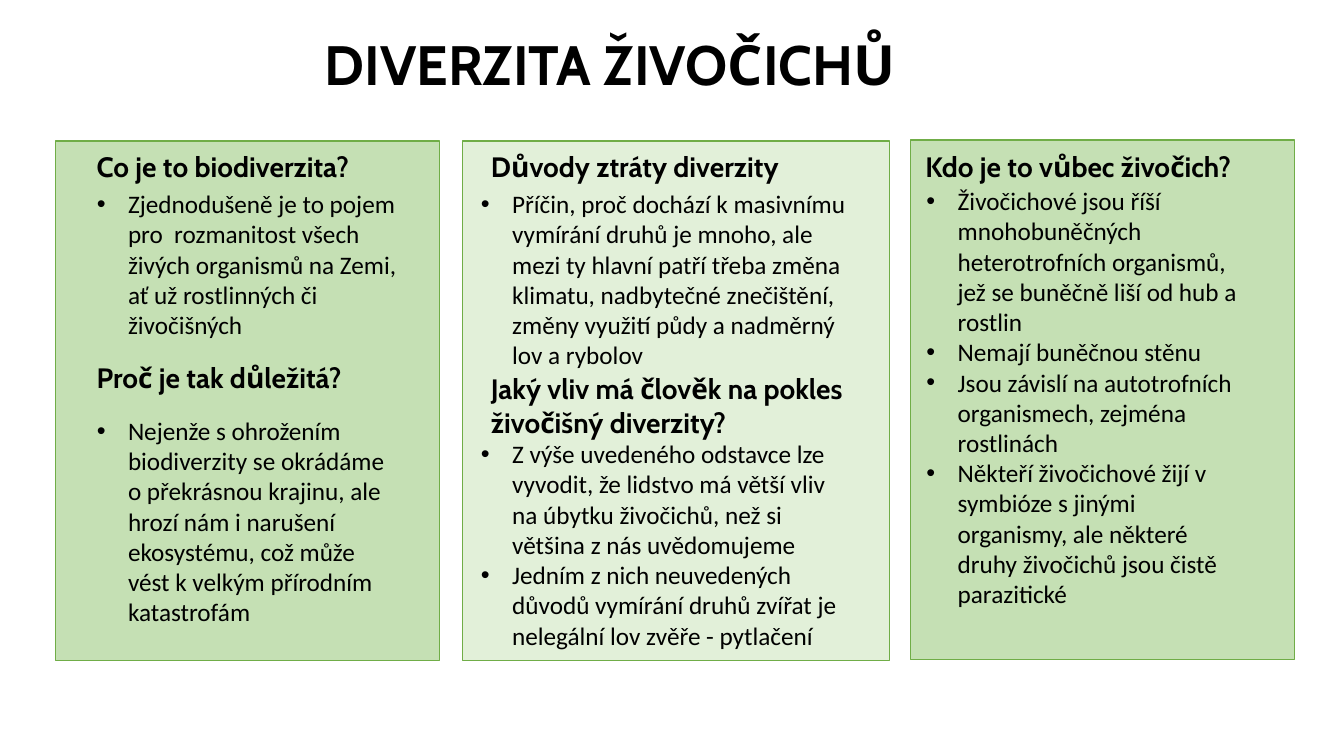
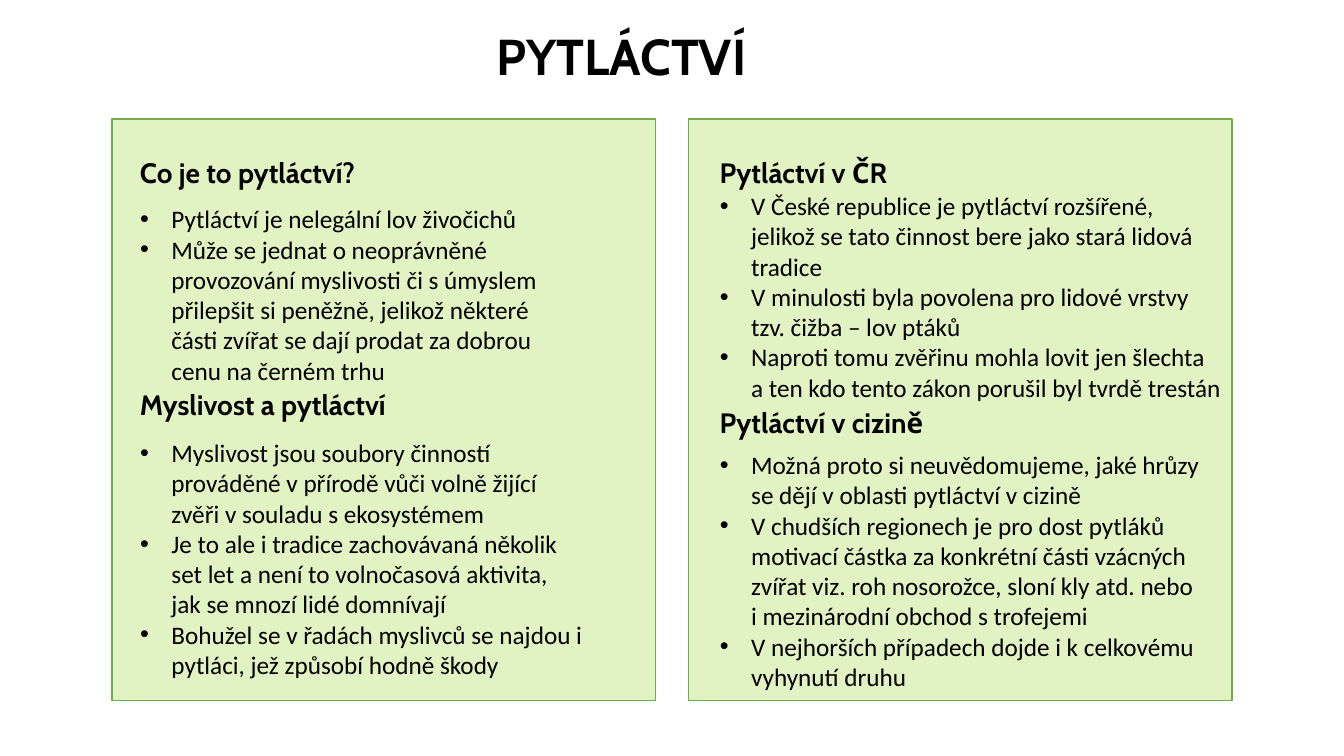
from lxml import etree
from pptx import Presentation
from pptx.dml.color import RGBColor
from pptx.enum.shapes import MSO_SHAPE as Shape
from pptx.enum.text import MSO_ANCHOR as Anchor, MSO_AUTO_SIZE as AutoSize, PP_ALIGN as Align
from pptx.oxml.ns import qn
from pptx.util import Inches, Pt

COLORS = {
    "ink": "000000",
    "border": "70AD47",
    "sage": "C5E0B4",
    "mist": "E2F0D9",
    "lime": "E1F3C3",
}
HEADING_FONT, LIST_FONT = "Cabin", "Calibri"
HEADING_HEIGHT = 0.44
BULLET_INDENT = 0.31
COMPARISON_LAYOUT = 4

DIVERSITY = {
    "title": ("DIVERZITA ŽIVOČICHŮ", (3.12, 0.06, 7.09, 1.23), 39.6),
    "panels": [
        ((0.55, 1.4, 3.81, 5.15), "sage"),
        ((4.59, 1.4, 4.23, 5.15), "mist"),
        ((9.03, 1.39, 3.81, 5.15), "sage"),
    ],
    "headings": [
        ("Co je to biodiverzita?", (0.86, 1.43, 3.19)),
        ("Proč je tak důležitá?", (0.86, 3.53, 3.08)),
        ("Důvody ztráty diverzity", (4.77, 1.43, 3.48)),
        ("Jaký vliv má člověk na pokles živočišný diverzity?", (4.77, 3.64, 3.95)),
        ("Kdo je to vůbec živočich?", (9.08, 1.43, 3.75)),
    ],
    "lists": [
        ((0.86, 1.82, 3.19, 1.62), [
            "Zjednodušeně je to pojem pro  rozmanitost všech živých organismů na Zemi, "
            "ať už rostlinných či živočišných",
        ]),
        ((0.86, 4.07, 3.19, 2.22), [
            "Nejenže s ohrožením biodiverzity se okrádáme o překrásnou krajinu, ale hrozí "
            "nám i narušení ekosystému, což může vést k velkým přírodním katastrofám",
        ]),
        ((4.67, 1.82, 3.86, 1.92), [
            "Příčin, proč dochází k masivnímu vymírání druhů je mnoho, ale mezi ty hlavní "
            "patří třeba změna klimatu, nadbytečné znečištění, změny využití půdy a "
            "nadměrný lov a rybolov",
        ]),
        ((4.67, 4.3, 3.86, 2.52), [
            "Z výše uvedeného odstavce lze vyvodit, že lidstvo má větší vliv na úbytku "
            "živočichů, než si většina z nás uvědomujeme",
            "Jedním z nich neuvedených důvodů vymírání druhů zvířat je nelegální lov "
            "zvěře - pytlačení",
        ]),
        ((9.09, 1.79, 3.38, 4.34), [
            "Živočichové jsou říší mnohobuněčných heterotrofních organismů, jež se "
            "buněčně liší od hub a rostlin",
            "Nemají buněčnou stěnu",
            "Jsou závislí na autotrofních organismech, zejména rostlinách",
            "Někteří živočichové žijí v symbióze s jinými organismy, ale některé druhy "
            "živočichů jsou čistě parazitické",
        ]),
    ],
}

POACHING = {
    "title": ("PYTLÁCTVÍ", (4.82, 0, 3.2, 1.18), 36),
    "panels": [
        ((1.11, 1.18, 5.39, 5.77), "lime"),
        ((6.83, 1.18, 5.39, 5.77), "lime"),
    ],
    "headings": [
        ("Co je to pytláctví?", (1.29, 1.49, 2.74)),
        ("Myslivost a pytláctví", (1.29, 3.8, 3.07)),
        ("Pytláctví v ČR", (7.04, 1.49, 2.14)),
        ("Pytláctví v cizině", (7.04, 3.97, 2.56)),
    ],
    "lists": [
        ((1.29, 1.97, 4.3, 1.92), [
            "Pytláctví je nelegální lov živočichů",
            "Může se jednat o neoprávněné provozování myslivosti či s úmyslem přilepšit si "
            "peněžně, jelikož některé části zvířat se dají prodat za dobrou cenu na černém "
            "trhu",
        ]),
        ((1.29, 4.29, 4.59, 2.83), [
            "Myslivost jsou soubory činností prováděné v přírodě vůči volně žijící zvěři v "
            "souladu s ekosystémem",
            "Je to ale i tradice zachovávaná několik set let a není to volnočasová "
            "aktivita, jak se mnozí lidé domnívají",
            "Bohužel se v řadách myslivců se najdou i pytláci, jež způsobí hodně škody",
        ]),
        ((7.04, 1.84, 5.18, 2.22), [
            "V České republice je pytláctví rozšířené, jelikož se tato činnost bere jako "
            "stará lidová tradice",
            "V minulosti byla povolena pro lidové vrstvy tzv. čižba – lov ptáků",
            "Naproti tomu zvěřinu mohla lovit jen šlechta a ten kdo tento zákon porušil "
            "byl tvrdě trestán",
        ]),
        ((7.04, 4.41, 4.98, 2.52), [
            "Možná proto si neuvědomujeme, jaké hrůzy se dějí v oblasti pytláctví v cizině",
            "V chudších regionech je pro dost pytláků motivací částka za konkrétní části "
            "vzácných zvířat viz. roh nosorožce, sloní kly atd. nebo i mezinárodní obchod "
            "s trofejemi",
            "V nejhorších případech dojde i k celkovému vyhynutí druhu",
        ]),
    ],
}


def color(key):
    """Return the named palette colour."""
    return RGBColor.from_string(COLORS[key])


def place(item, box):
    """Move and size an item to a box given in inches."""
    item.left, item.top, item.width, item.height = map(Inches, box)


def add_bullet(paragraph):
    """Give a paragraph a hanging round bullet."""
    properties = paragraph._p.get_or_add_pPr()
    properties.set("marL", str(Inches(BULLET_INDENT)))
    properties.set("indent", str(-Inches(BULLET_INDENT)))
    etree.SubElement(properties, qn("a:buFont")).set("typeface", "Arial")
    etree.SubElement(properties, qn("a:buChar")).set("char", "•")


def write(holder, lines, *, font, size, bold=False, bullets=False, spacing=1.0,
          anchor=Anchor.TOP, fit=AutoSize.SHAPE_TO_FIT_TEXT):
    """Fill a holder with formatted paragraphs."""
    frame = holder.text_frame
    frame.word_wrap, frame.auto_size, frame.vertical_anchor = True, fit, anchor
    for index, line in enumerate(lines):
        paragraph = frame.add_paragraph() if index else frame.paragraphs[0]
        paragraph.alignment = Align.LEFT
        paragraph.line_spacing = spacing
        paragraph.space_before = paragraph.space_after = Pt(0)
        if bullets:
            add_bullet(paragraph)
        run = paragraph.add_run()
        run.text = line
        run.font.name, run.font.size, run.font.bold = font, Pt(size), bold
        run.font.color.rgb = color("ink")


def add_panel(slide, box, fill):
    """Draw a bordered panel behind everything else on the slide."""
    panel = slide.shapes.add_shape(Shape.RECTANGLE, *map(Inches, box))
    panel.shadow.inherit = False
    panel.fill.solid()
    panel.fill.fore_color.rgb = color(fill)
    panel.line.color.rgb = color("border")
    panel.line.width = Pt(1)
    slide.shapes.title.element.addprevious(panel.element)


def add_title(slide, text, box, size):
    """Set the slide title."""
    place(slide.shapes.title, box)
    write(slide.shapes.title, [text], font=HEADING_FONT, size=size, bold=True,
          spacing=0.9, anchor=Anchor.MIDDLE, fit=AutoSize.NONE)


def add_heading(slide, text, box):
    """Add a section heading."""
    heading = slide.shapes.add_textbox(*map(Inches, (*box, HEADING_HEIGHT)))
    write(heading, [text], font=HEADING_FONT, size=20, bold=True)


def add_lists(slide, lists):
    """Put lists in the body placeholders, and in text boxes once those run out."""
    bodies = [body for body in slide.placeholders if body.placeholder_format.idx]
    for index, (box, lines) in enumerate(lists):
        if index < len(bodies):
            holder = bodies[index]
            place(holder, box)
        else:
            holder = slide.shapes.add_textbox(*map(Inches, box))
        write(holder, lines, font=LIST_FONT, size=18, bullets=True)
    for spare in bodies[len(lists):]:
        spare.element.getparent().remove(spare.element)


def add_topic(deck, topic):
    """Build one slide from its topic content."""
    slide = deck.slides.add_slide(deck.slide_layouts[COMPARISON_LAYOUT])
    for box, fill in topic["panels"]:
        add_panel(slide, box, fill)
    add_title(slide, *topic["title"])
    add_lists(slide, topic["lists"])
    for text, box in topic["headings"]:
        add_heading(slide, text, box)


def main():
    """Build and save the presentation."""
    deck = Presentation()
    deck.slide_width, deck.slide_height = Inches(13.33), Inches(7.5)
    for topic in (DIVERSITY, POACHING):
        add_topic(deck, topic)
    deck.save("out.pptx")


if __name__ == "__main__":
    main()
